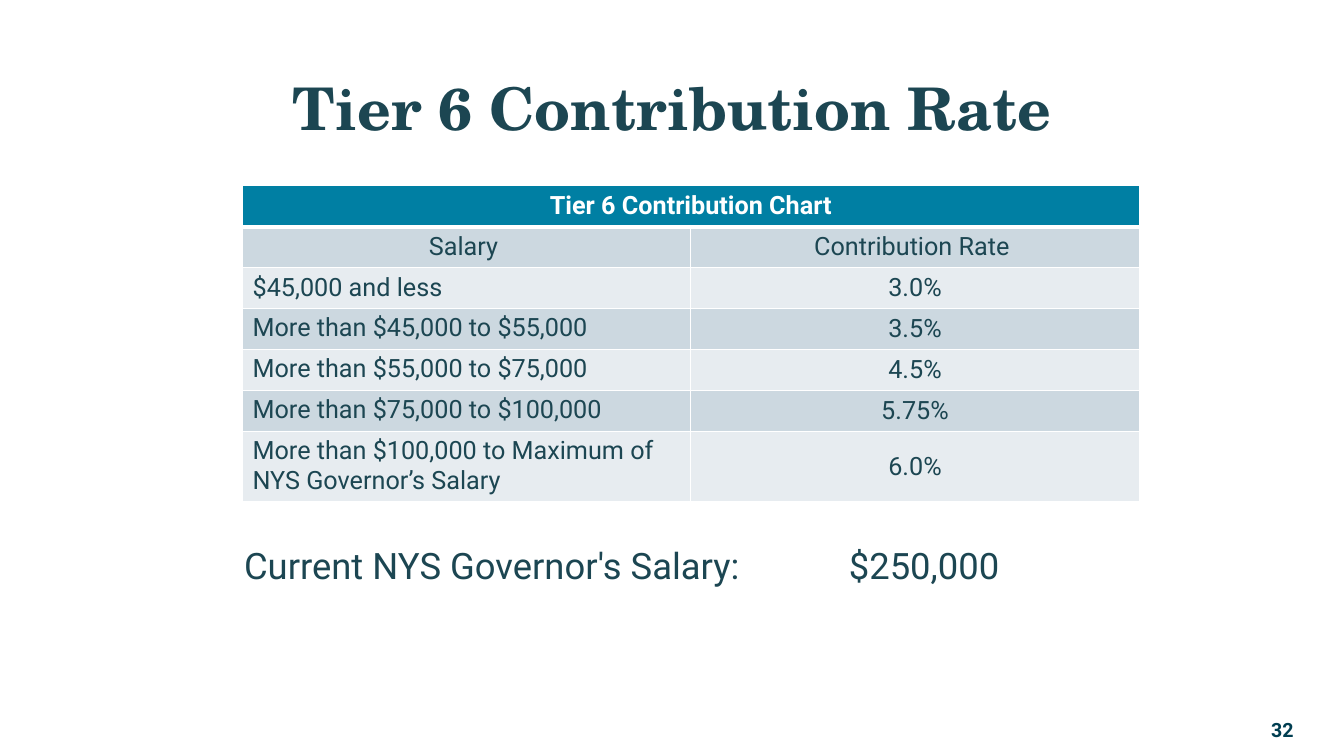
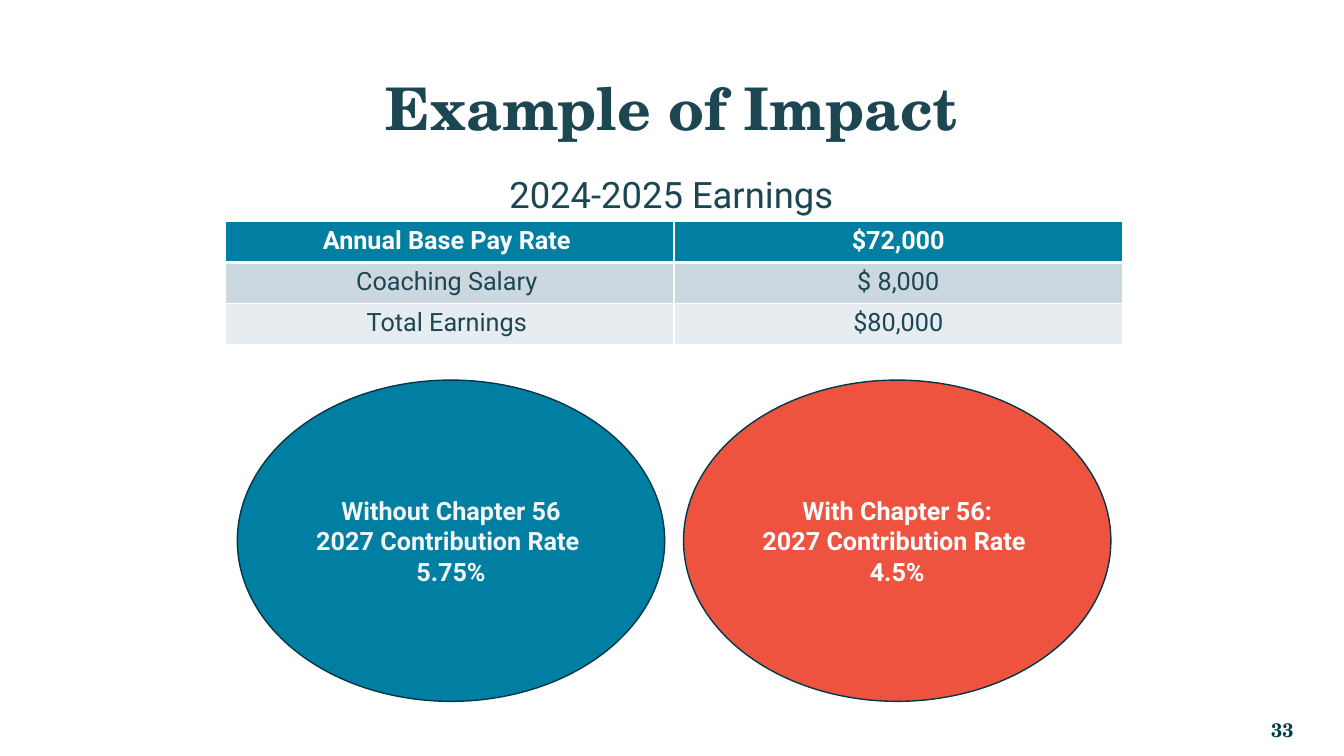
import pptx
import pptx.dml.color
import pptx.enum.shapes
import pptx.enum.text
import pptx.oxml
import pptx.oxml.ns
import pptx.util

PX = 9525
ALIGN = pptx.enum.text.PP_ALIGN
ANCHOR = pptx.enum.text.MSO_ANCHOR
OVAL = pptx.enum.shapes.MSO_SHAPE.FLOWCHART_CONNECTOR


def px(length):
    return pptx.util.Emu(length * PX)


def color(value):
    return pptx.dml.color.RGBColor.from_string(value)


class Deck:
    SANS = "Roboto"
    SERIF = "TeX Gyre Schola"
    INK = "1C4652"
    NAVY = "003E51"
    OUTLINE = "003847"
    TEAL = "007FA3"
    CORAL = "EE5340"
    WHITE = "FFFFFF"
    OFF_WHITE = "F5F5F5"
    BANDS = ("CCD8E0", "E7ECF0")
    ROW_HEIGHT = 39
    COLUMN_WIDTH = 427

    def __init__(self):
        self.deck = pptx.Presentation()
        self.deck.slide_width = px(1280)
        self.deck.slide_height = px(720)
        self.page = None

    def add_page(self, title, number, number_font):
        self.page = self.deck.slides.add_slide(self.deck.slide_layouts[5])
        box = self.page.shapes.title
        box.left, box.top, box.width, box.height = map(px, (48, 48, 1184, 88))
        self.set_lines(box.text_frame, [title], 42, self.INK, True, self.SERIF,
                       anchor=ANCHOR.BOTTOM, inset=0)
        box.text_frame.auto_size = pptx.enum.text.MSO_AUTO_SIZE.NONE
        box.text_frame.paragraphs[0].line_spacing = 0.9
        self.text((1125, 681, 107, 27), number, 14, self.NAVY, True,
                  number_font, ALIGN.RIGHT, ANCHOR.MIDDLE, 0)

    def set_lines(self, frame, lines, size, ink, bold=False, font=SANS,
                  align=ALIGN.CENTER, anchor=ANCHOR.TOP, inset=None):
        frame.word_wrap = True
        frame.vertical_anchor = anchor
        if inset is not None:
            frame.margin_left = frame.margin_right = px(inset)
            frame.margin_top = frame.margin_bottom = px(inset)
        for index, line in enumerate(lines):
            para = frame.add_paragraph() if index else frame.paragraphs[0]
            para.alignment = align
            span = para.add_run()
            span.text = line
            span.font.name = font
            span.font.size = pptx.util.Pt(size)
            span.font.bold = bold
            span.font.color.rgb = color(ink)

    def text(self, area, line, size, ink, bold=False, font=SANS,
             align=ALIGN.LEFT, anchor=ANCHOR.TOP, inset=None, tab=None):
        box = self.page.shapes.add_textbox(*map(px, area))
        self.set_lines(box.text_frame, [line], size, ink, bold, font, align,
                       anchor, inset)
        if tab is not None:
            properties = box.text_frame.paragraphs[0]._p.get_or_add_pPr()
            properties.append(pptx.oxml.parse_xml(
                f'<a:tabLst {pptx.oxml.ns.nsdecls("a")}>'
                f'<a:tab pos="{px(tab)}" algn="l"/></a:tabLst>'))

    def oval(self, area, lines, fill, ink):
        shape = self.page.shapes.add_shape(OVAL, *map(px, area))
        shape.shadow.inherit = False
        shape.fill.solid()
        shape.fill.fore_color.rgb = color(fill)
        shape.line.color.rgb = color(self.OUTLINE)
        shape.line.width = pptx.util.Pt(1)
        self.set_lines(shape.text_frame, lines, 18, ink, True,
                       anchor=ANCHOR.MIDDLE)

    def borders(self, cell, top, bottom):
        properties = cell._tc.get_or_add_tcPr()
        sides = (("L", 1), ("R", 1), ("T", top), ("B", bottom))
        for index, (side, points) in enumerate(sides):
            properties.insert(index, pptx.oxml.parse_xml(
                f'<a:ln{side} {pptx.oxml.ns.nsdecls("a")} '
                f'w="{pptx.util.Pt(points)}"><a:solidFill>'
                f'<a:srgbClr val="{self.WHITE}"/></a:solidFill></a:ln{side}>'))

    def table(self, left, top, rows, left_from=None, last_height=ROW_HEIGHT):
        columns = len(rows[-1])
        heights = [self.ROW_HEIGHT] * (len(rows) - 1) + [last_height]
        table = self.page.shapes.add_table(
            len(rows), columns, px(left), px(top),
            px(columns * self.COLUMN_WIDTH), px(sum(heights))).table
        for column in table.columns:
            column.width = px(self.COLUMN_WIDTH)
        for y, (values, height) in enumerate(zip(rows, heights)):
            table.rows[y].height = px(height)
            header = y == 0
            listed = left_from is not None and y >= left_from
            for x in range(columns):
                cell = table.cell(y, x)
                cell.fill.solid()
                cell.fill.fore_color.rgb = color(
                    self.TEAL if header else self.BANDS[(y - 1) % 2])
                self.borders(cell, 3 if y == 1 else 1, 3 if header else 1)
                if x < len(values):
                    self.set_lines(
                        cell.text_frame, [values[x]], 18,
                        self.WHITE if header else self.INK, header,
                        align=ALIGN.LEFT if listed and x == 0 else ALIGN.CENTER)
                cell.vertical_anchor = (
                    ANCHOR.MIDDLE if listed and x else ANCHOR.TOP)
            if len(values) < columns:
                table.cell(y, 0).merge(table.cell(y, columns - 1))


def rate_page(deck):
    deck.add_page("Tier 6 Contribution Rate", "32", deck.SANS)
    deck.table(231, 177, [
        ["Tier 6 Contribution Chart"],
        ["Salary ", "Contribution Rate "],
        ["$45,000 and less", "3.0%"],
        ["More than $45,000 to $55,000", "3.5%"],
        ["More than $55,000 to $75,000", "4.5%"],
        ["More than $75,000 to $100,000", "5.75%"],
        ["More than $100,000 to Maximum of NYS Governor’s Salary", "6.0%"],
    ], left_from=2, last_height=65)
    deck.text((223, 513, 853, 52), "Current NYS Governor's Salary:\t$250,000",
              26, deck.INK, tab=576)


def impact_page(deck):
    deck.add_page("Example of Impact", "33", deck.SERIF)
    deck.table(215, 211, [
        ["Annual Base Pay Rate ", "$72,000"],
        ["Coaching Salary ", "$ 8,000"],
        ["Total Earnings ", "$80,000"],
    ])
    deck.text((468, 159, 343, 52), "2024-2025 Earnings", 26, deck.INK,
              align=ALIGN.CENTER)
    outcomes = (
        ("Without Chapter 56", "5.75%", deck.TEAL, deck.OFF_WHITE),
        ("With Chapter 56:", "4.5%", deck.CORAL, deck.WHITE),
    )
    for index, (case, rate, fill, ink) in enumerate(outcomes):
        deck.oval((226 + index * 425, 362, 407, 306),
                  [case, "2027 Contribution Rate ", rate], fill, ink)


def main():
    deck = Deck()
    rate_page(deck)
    impact_page(deck)
    deck.deck.save("out.pptx")


if __name__ == "__main__":
    main()
